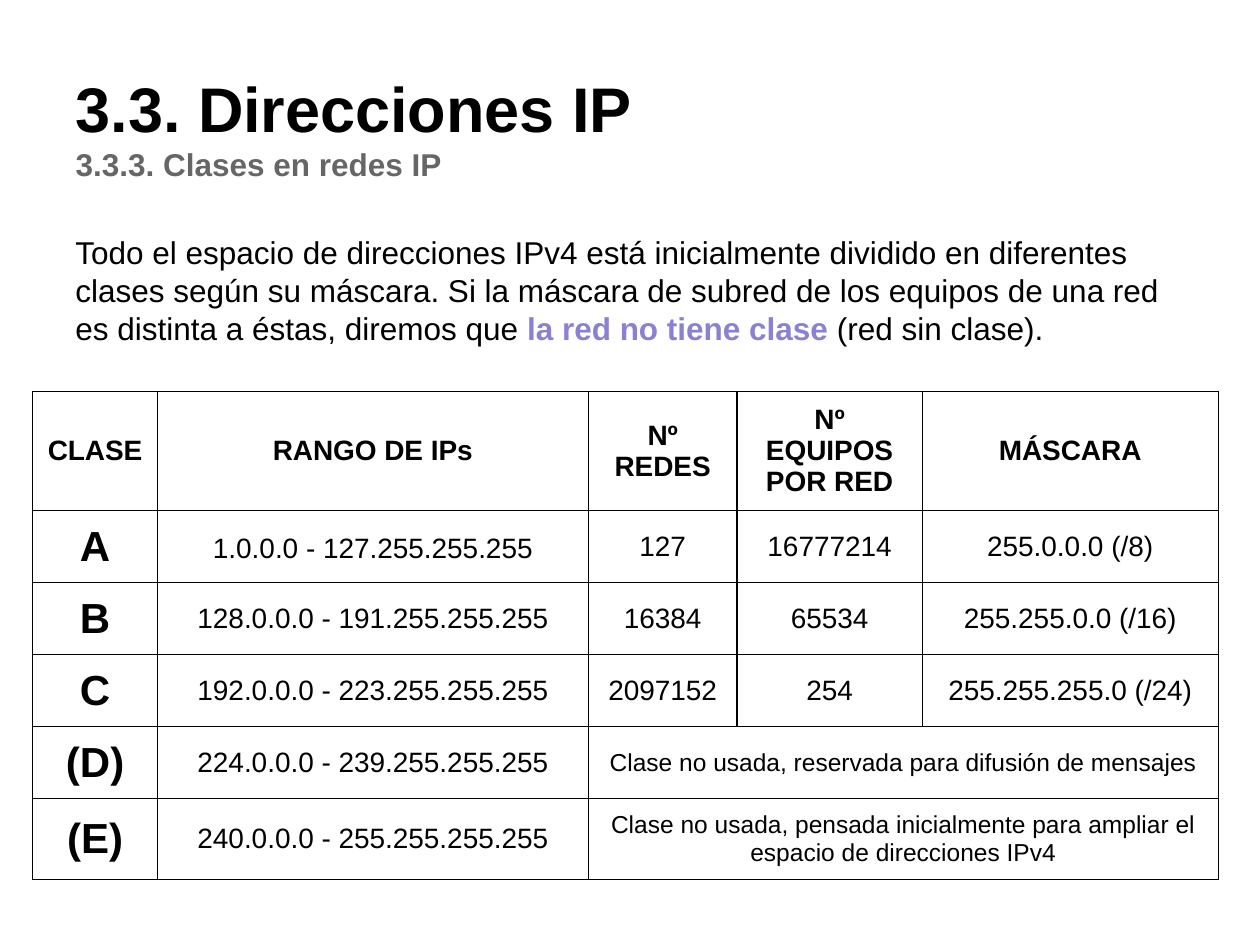
from lxml import etree
from pptx import Presentation
from pptx.dml.color import RGBColor
from pptx.enum import text
from pptx.oxml import ns
from pptx.util import Inches, Pt

COLORS = {"black": "000000", "gray": "666666", "violet": "8B81D2"}


def style(font, size, color="black", bold=False):
    font.name = "Arial"
    font.size = Pt(size)
    font.bold = bold
    font.color.rgb = RGBColor.from_string(COLORS[color])


def add_borders(cell):
    properties = cell._tc.get_or_add_tcPr()
    for index, side in enumerate(("lnL", "lnR", "lnT", "lnB")):
        line = etree.Element(ns.qn(f"a:{side}"), w=str(Pt(0.75)))
        fill = etree.SubElement(line, ns.qn("a:solidFill"))
        etree.SubElement(fill, ns.qn("a:srgbClr"), val=COLORS["black"])
        properties.insert(index, line)


presentation = Presentation()
presentation.slide_width = Inches(10)
presentation.slide_height = Inches(7.5)
slide = presentation.slides.add_slide(presentation.slide_layouts[5])

# Title and introduction
title = slide.shapes.title
title.left, title.top = Inches(0.5), Inches(0.3)
title.width, title.height = Inches(9), Inches(1.25)
intro = slide.shapes.add_textbox(Inches(0.5), Inches(1.75), Inches(9), Inches(1.14))
for shape, anchor in ((title, text.MSO_ANCHOR.BOTTOM), (intro, text.MSO_ANCHOR.TOP)):
    frame = shape.text_frame
    frame.word_wrap = True
    frame.auto_size = text.MSO_AUTO_SIZE.NONE
    frame.vertical_anchor = anchor
    frame.margin_left = frame.margin_right = Inches(0.1)
    frame.margin_top = frame.margin_bottom = Inches(0.1)

title.text_frame.text = "3.3. Direcciones IP\n3.3.3. Clases en redes IP"
for paragraph, size, color in zip(title.text_frame.paragraphs, (36, 18), ("black", "gray")):
    paragraph.alignment = text.PP_ALIGN.LEFT
    style(paragraph.font, size, color, bold=True)

paragraph = intro.text_frame.paragraphs[0]
paragraph.space_before = Pt(6)
for words, color, bold in (
    ("Todo el espacio de direcciones IPv4 está inicialmente dividido en diferentes "
     "clases según su máscara. Si la máscara de subred de los equipos de una red "
     "es distinta a éstas, diremos que ", "black", False),
    ("la red no tiene clase", "violet", True),
    (" (red sin clase).", "black", False),
):
    run = paragraph.add_run()
    run.text = words
    style(run.font, 18, color, bold)

# Table of address classes; a row with three entries merges its last columns
rows = [
    ("CLASE", "RANGO DE IPs", "Nº REDES", "Nº EQUIPOS POR RED", "MÁSCARA"),
    ("A", "1.0.0.0 - 127.255.255.255", "127", "16777214", "255.0.0.0 (/8)"),
    ("B", "128.0.0.0 - 191.255.255.255", "16384", "65534", "255.255.0.0 (/16)"),
    ("C", "192.0.0.0 - 223.255.255.255", "2097152", "254", "255.255.255.0 (/24)"),
    ("(D)", "224.0.0.0 - 239.255.255.255",
     "Clase no usada, reservada para difusión de mensajes"),
    ("(E)", "240.0.0.0 - 255.255.255.255",
     "Clase no usada, pensada inicialmente para ampliar el espacio de direcciones IPv4"),
]
column_widths = [0.99, 3.42, 1.18, 1.47, 2.35]
row_heights = [0.94, 0.57, 0.57, 0.57, 0.57, 0.64]
table = slide.shapes.add_table(
    len(rows), len(column_widths), Inches(0.26), Inches(3.11),
    Inches(sum(column_widths)), Inches(sum(row_heights))).table
table.first_row = table.horz_banding = False
for column, width in zip(table.columns, column_widths):
    column.width = Inches(width)

for row_index, (values, height) in enumerate(zip(rows, row_heights)):
    table.rows[row_index].height = Inches(height)
    merged = len(values) == 3
    if merged:
        table.cell(row_index, 2).merge(table.cell(row_index, 4))
    for column_index in range(len(column_widths)):
        cell = table.cell(row_index, column_index)
        cell.fill.background()
        add_borders(cell)
        if cell.is_spanned:
            continue
        cell.text = values[column_index]
        cell.vertical_anchor = text.MSO_ANCHOR.MIDDLE
        cell.margin_left = cell.margin_right = Inches(0.1)
        cell.margin_top = cell.margin_bottom = Inches(0.1)
        header, class_name = row_index == 0, column_index == 0
        size = 16
        if class_name and not header:
            size = 24
        elif merged and column_index == 2:
            size = 14
        paragraph = cell.text_frame.paragraphs[0]
        paragraph.alignment = text.PP_ALIGN.CENTER
        style(paragraph.font, size, bold=header or class_name)
table.cell(1, 1).text_frame.paragraphs[0].line_spacing = 1.15

presentation.save("out.pptx")
